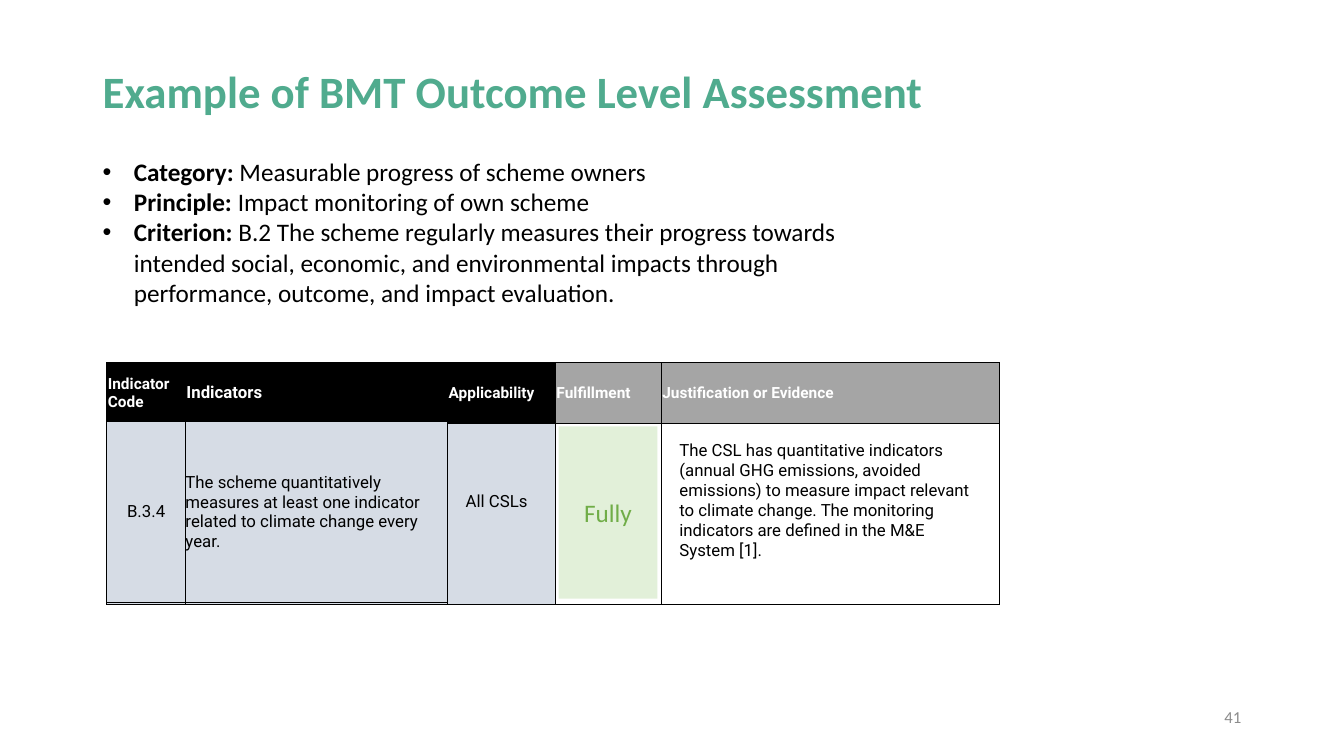
from lxml.etree import SubElement
from pptx import Presentation
from pptx.dml.color import RGBColor
from pptx.enum.shapes import MSO_SHAPE
from pptx.enum.text import MSO_ANCHOR, PP_ALIGN
from pptx.oxml import parse_xml
from pptx.oxml.ns import nsdecls, qn
from pptx.util import Pt

PX = 9144  # 100 px to the inch

BLACK, WHITE, GREY = "000000", "FFFFFF", "A5A5A5"
BLUE, PALE_GREEN, GREEN, TEAL = "D6DCE5", "E2F0D9", "70AD47", "50AB8E"

BODY = {"name": "Roboto", "size": 12, "color": BLACK}
HEAD = {"name": "Roboto", "size": 11, "color": WHITE, "bold": True}
POINT = {"name": "Calibri", "size": 18, "color": BLACK}

POINTS = [
    ("Category: ", "Measurable progress of scheme owners"),
    ("Principle: ", "Impact monitoring of own scheme"),
    ("Criterion: ", "B.2 The scheme regularly measures their progress towards "
     "intended social, economic, and environmental impacts through "
     "performance, outcome, and impact evaluation."),
]
INDICATOR = ("The scheme quantitatively measures at least one indicator "
             "related to climate change every year.")
EVIDENCE = ("The CSL has quantitative indicators (annual GHG emissions, avoided "
            "emissions) to measure impact relevant to climate change. The "
            "monitoring indicators are defined in the M&E System [1].")


def px(*lengths):
    return [n * PX for n in lengths]


def rgb(color):
    return RGBColor.from_string(color)


def add_run(p, text, fmt):
    r = p.add_run()
    r.text = text
    for key, value in fmt.items():
        if key == "color":
            r.font.color.rgb = rgb(value)
        else:
            setattr(r.font, key, Pt(value) if key == "size" else value)


def add_text(s, box, text, fmt, anchor=MSO_ANCHOR.TOP, **para):
    tf = s.shapes.add_textbox(*px(*box)).text_frame
    tf.word_wrap = True
    tf.vertical_anchor = anchor
    p = tf.paragraphs[0]
    for key, value in para.items():
        setattr(p, key, value)
    add_run(p, text, fmt)


def add_points(s, box, points):
    tf = s.shapes.add_textbox(*px(*box)).text_frame
    tf.word_wrap = True
    for i, (label, text) in enumerate(points):
        p = tf.add_paragraph() if i else tf.paragraphs[0]
        pPr = p._p.get_or_add_pPr()
        pPr.set("marL", str(31 * PX))
        pPr.set("indent", str(-31 * PX))
        SubElement(pPr, qn("a:buFont")).set("typeface", "Arial")
        SubElement(pPr, qn("a:buChar")).set("char", "•")
        add_run(p, label, {**POINT, "bold": True})
        add_run(p, text, POINT)


def add_borders(cell):
    tcPr = cell._tc.get_or_add_tcPr()
    for i, side in enumerate("LRTB"):
        tcPr.insert(i, parse_xml(
            f'<a:ln{side} {nsdecls("a")} w="12700"><a:solidFill>'
            f'<a:srgbClr val="{BLACK}"/></a:solidFill></a:ln{side}>'))


def fill_cell(cell, text, fill, fmt, align, margin):
    cell.vertical_anchor = MSO_ANCHOR.MIDDLE
    for side in ("left", "right", "top", "bottom"):
        setattr(cell, f"margin_{side}", margin * PX)
    if fill:
        cell.fill.solid()
        cell.fill.fore_color.rgb = rgb(fill)
    else:
        cell.fill.background()
    add_borders(cell)
    p = cell.text_frame.paragraphs[0]
    p.alignment = align
    if text:
        add_run(p, text, fmt)


def add_grid(s, left, top, widths, heights, rows, margin):
    """Each cell is (text, fill, format, alignment)."""
    box = px(left, top, sum(widths), sum(heights))
    table = s.shapes.add_table(len(heights), len(widths), *box).table
    table.first_row = table.horz_banding = False
    for col, width in zip(table.columns, px(*widths)):
        col.width = width
    for row, height, cells in zip(table.rows, px(*heights), rows):
        row.height = height
        for cell, content in zip(row.cells, cells):
            fill_cell(cell, *content, margin)


def add_rating(s, box, text):
    sp = s.shapes.add_shape(MSO_SHAPE.RECTANGLE, *px(*box))
    sp.shadow.inherit = False
    sp.fill.solid()
    sp.fill.fore_color.rgb = rgb(PALE_GREEN)
    sp.line.fill.background()
    tf = sp.text_frame
    tf.vertical_anchor = MSO_ANCHOR.MIDDLE
    p = tf.paragraphs[0]
    p.alignment = PP_ALIGN.CENTER
    add_run(p, text, {"name": "Calibri", "size": 18, "color": GREEN})


def main():
    prs = Presentation()
    prs.slide_width, prs.slide_height = px(1333, 750)
    s = prs.slides.add_slide(prs.slide_layouts[6])

    # Title and page number
    add_text(s, (92, 21, 1145, 145), "Example of BMT Outcome Level Assessment",
             {"name": "Calibri", "size": 32, "color": TEAL, "bold": True},
             MSO_ANCHOR.MIDDLE, line_spacing=0.9)
    add_text(s, (941, 691, 300, 40), "41",
             {"name": "Calibri", "size": 12, "color": "8C8C8C"},
             MSO_ANCHOR.MIDDLE, alignment=PP_ALIGN.RIGHT)

    # Assessment table, with the indicator row laid over it
    left, widths = 106, [78, 260, 107, 105, 335]
    left_al, center = PP_ALIGN.LEFT, PP_ALIGN.CENTER
    header = [
        ("Indicator Code", BLACK, HEAD, left_al),
        ("Indicators", BLACK, {**HEAD, "size": 12}, left_al),
        ("Applicability", BLACK, HEAD, left_al),
        ("Fulfillment", GREY, HEAD, left_al),
        ("Justification or Evidence", GREY, HEAD, left_al),
    ]
    blank = [("", fill, BODY, left_al) for fill in (BLUE, BLUE, BLUE, None, None)]
    add_grid(s, left, 360, widths, [60, 180], [header, blank], 1)
    indicator = [("B.3.4", BLUE, BODY, center), (INDICATOR, BLUE, BODY, left_al)]
    add_grid(s, left, 418, widths[:2], [180], [indicator], 0)

    # Row contents
    add_text(s, (452, 482, 107, 30), "All CSLs", BODY)
    add_rating(s, (554, 423, 98, 171), "Fully")
    add_text(s, (664, 431, 309, 131), EVIDENCE, BODY)

    # Category, principle and criterion
    add_points(s, (92, 150, 830, 162), POINTS)

    prs.save("out.pptx")


if __name__ == "__main__":
    main()
